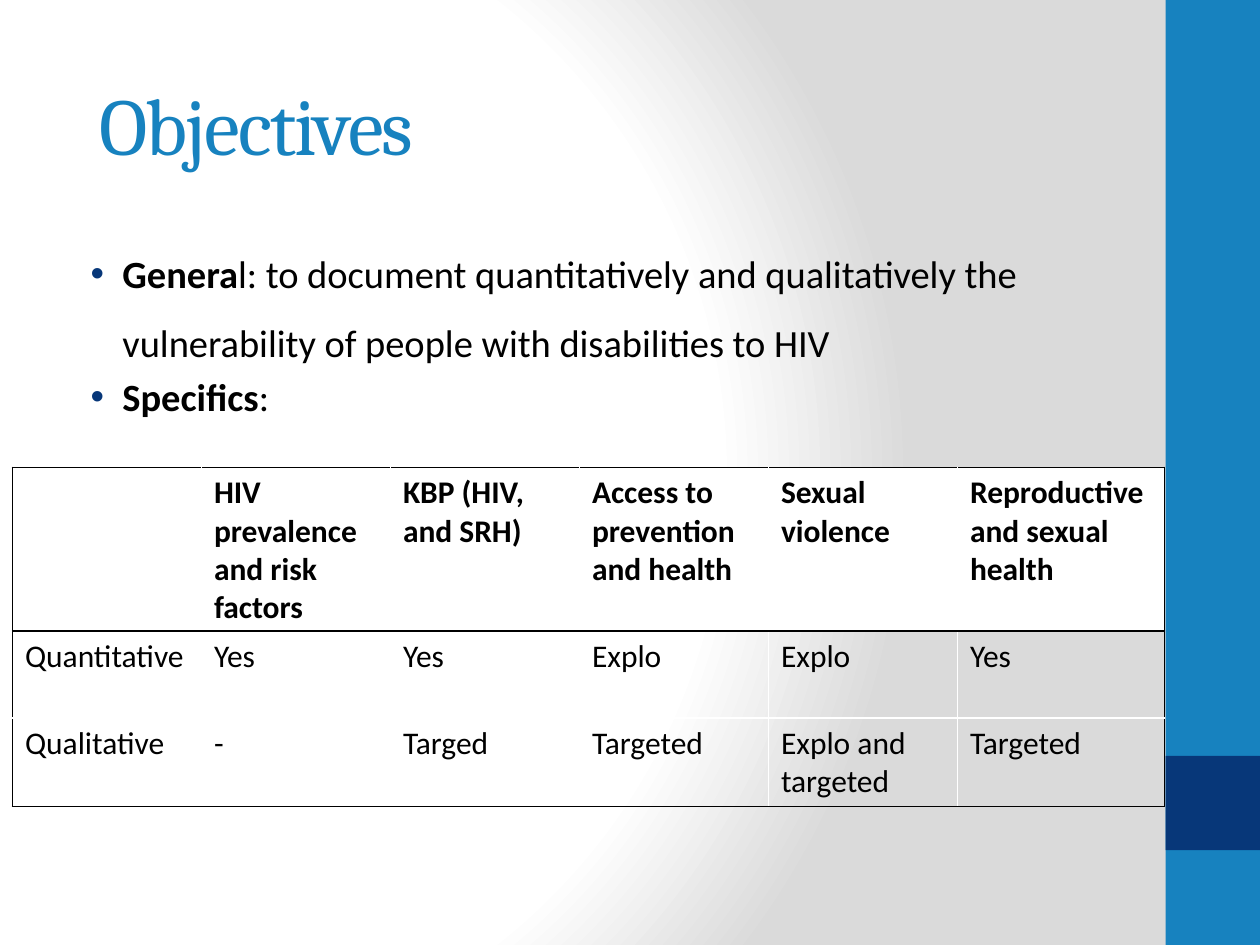
"""Build the Objectives slide with its two bullets and the methods table."""
from pptx import Presentation
from pptx.dml.color import RGBColor
from pptx.enum.shapes import MSO_SHAPE
from pptx.enum.text import MSO_ANCHOR
from pptx.oxml import parse_xml
from pptx.oxml.ns import nsdecls
from pptx.util import Cm, Pt

RECT = MSO_SHAPE.RECTANGLE
TOP, MIDDLE = MSO_ANCHOR.TOP, MSO_ANCHOR.MIDDLE
BLUE = RGBColor(0x17, 0x82, 0xBF)
NAVY = RGBColor(0x07, 0x37, 0x79)
BLACK = RGBColor(0, 0, 0)
WHITE = RGBColor(255, 255, 255)
GREY = RGBColor(0xDA, 0xDA, 0xDA)

BULLETS = [
    ("Genera", "l: to document quantitatively and qualitatively the "
     "vulnerability of people with disabilities to HIV", 1.5),
    ("Specifics", ":", 1.0),
]
ROWS = [
    ["", "HIV prevalence and risk factors", "KBP (HIV, and SRH)",
     "Access to prevention and health", "Sexual violence",
     "Reproductive and sexual health"],
    ["Quantitative", "Yes", "Yes", "Explo", "Explo", "Yes"],
    ["Qualitative", "-", "Targed", "Targeted", "Explo and targeted", "Targeted"],
]


class Deck:
    def __init__(self, prs):
        self.heading, self.body = "Cambria", "Calibri"
        self.s = prs.slides.add_slide(prs.slide_layouts[6])

    def background(self, stops):
        fill = self.s.background.fill
        fill.solid()
        bg = self.s.element.xpath("./p:cSld/p:bg/p:bgPr")[0]
        gs = "".join(f'<a:gs pos="{pos * 1000}"><a:srgbClr val="{color}"/></a:gs>'
                     for pos, color in stops)
        bg.replace(bg[0], parse_xml(
            f'<a:gradFill {nsdecls("a")} rotWithShape="1"><a:gsLst>{gs}</a:gsLst>'
            '<a:path path="circle"><a:fillToRect l="20000" t="50000" r="100000" '
            'b="50000"/></a:path></a:gradFill>'))

    def bar(self, x, y, w, h, color):
        sp = self.s.shapes.add_shape(RECT, Cm(x), Cm(y), Cm(w), Cm(h))
        sp.shadow.inherit = False
        sp.fill.solid()
        sp.fill.fore_color.rgb = color
        sp.line.fill.background()

    def font(self, r, name, size, color, bold=False):
        r.font.name, r.font.size, r.font.bold = name, Pt(size), bold
        r.font.color.rgb = color

    def text_frame(self, x, y, w, h, anchor):
        tf = self.s.shapes.add_textbox(Cm(x), Cm(y), Cm(w), Cm(h)).text_frame
        tf.word_wrap = True
        tf.vertical_anchor = anchor
        return tf

    def title(self, text, x, y, w, h):
        tf = self.text_frame(x, y, w, h, MIDDLE)
        tf.text = text
        r = tf.paragraphs[0].runs[0]
        self.font(r, self.heading, 46, BLUE)
        r.font._element.set("spc", "-100")

    def bullets(self, items, x, y, w, h):
        tf = self.text_frame(x, y, w, h, TOP)
        for i, (lead, rest, spacing) in enumerate(items):
            p = tf.add_paragraph() if i else tf.paragraphs[0]
            p.line_spacing, p.space_before = spacing, Pt(4.4)
            for text, bold in ((lead, True), (rest, False)):
                r = p.add_run()
                r.text = text
                self.font(r, self.body, 22, BLACK, bold)
            pPr = p._p.get_or_add_pPr()
            pPr.set("marL", str(Cm(0.95)))
            pPr.set("indent", str(Cm(-0.64)))
            for xml in (f'<a:buClr {nsdecls("a")}><a:srgbClr val="{NAVY}"/></a:buClr>',
                        f'<a:buFont {nsdecls("a")} typeface="Arial"/>',
                        f'<a:buChar {nsdecls("a")} char="•"/>'):
                pPr.append(parse_xml(xml))

    def borders(self, cell, colors):
        tcPr = cell._tc.get_or_add_tcPr()
        for side, color in zip("LRTB", colors):
            tcPr.append(parse_xml(
                f'<a:ln{side} {nsdecls("a")} w="{Pt(1)}"><a:solidFill>'
                f'<a:srgbClr val="{color}"/></a:solidFill></a:ln{side}>'))

    def table(self, rows, x, y, widths, heights):
        n, m = len(rows), len(rows[0])
        table = self.s.shapes.add_table(
            n, m, Cm(x), Cm(y), Cm(sum(widths)), Cm(sum(heights))).table
        table.horz_banding = False
        for column, width in zip(table.columns, widths):
            column.width = Cm(width)
        for row, height in zip(table.rows, heights):
            row.height = Cm(height)
        for i, row in enumerate(rows):
            for j, text in enumerate(row):
                cell = table.cell(i, j)
                black = (j == 0, j == m - 1, i < 2, i != 1)
                self.borders(cell, [BLACK if b else WHITE for b in black])
                if i == 0:
                    cell.fill.solid()
                    cell.fill.fore_color.rgb = WHITE
                else:
                    cell.fill.background()
                cell.text_frame.text = text
                for r in cell.text_frame.paragraphs[0].runs:
                    self.font(r, self.body, 18, BLACK, i == 0)


def main():
    prs = Presentation()
    prs.slide_width, prs.slide_height = Cm(25.4), Cm(19.05)
    deck = Deck(prs)
    deck.background([(0, WHITE), (75, WHITE), (100, GREY)])
    deck.bar(23.5, 0, 1.9, 19.05, BLUE)
    deck.bar(23.5, 15.24, 1.9, 1.9, NAVY)
    deck.title("Objectives", 1.75, 0.64, 21.9, 3.68)
    deck.bullets(BULLETS, 1.27, 4.45, 22.86, 9.68)
    deck.table(ROWS, 0.25, 9.42, [3.81] * 5 + [4.17], [3.3, 1.75, 1.78])
    prs.save("out.pptx")


if __name__ == "__main__":
    main()
